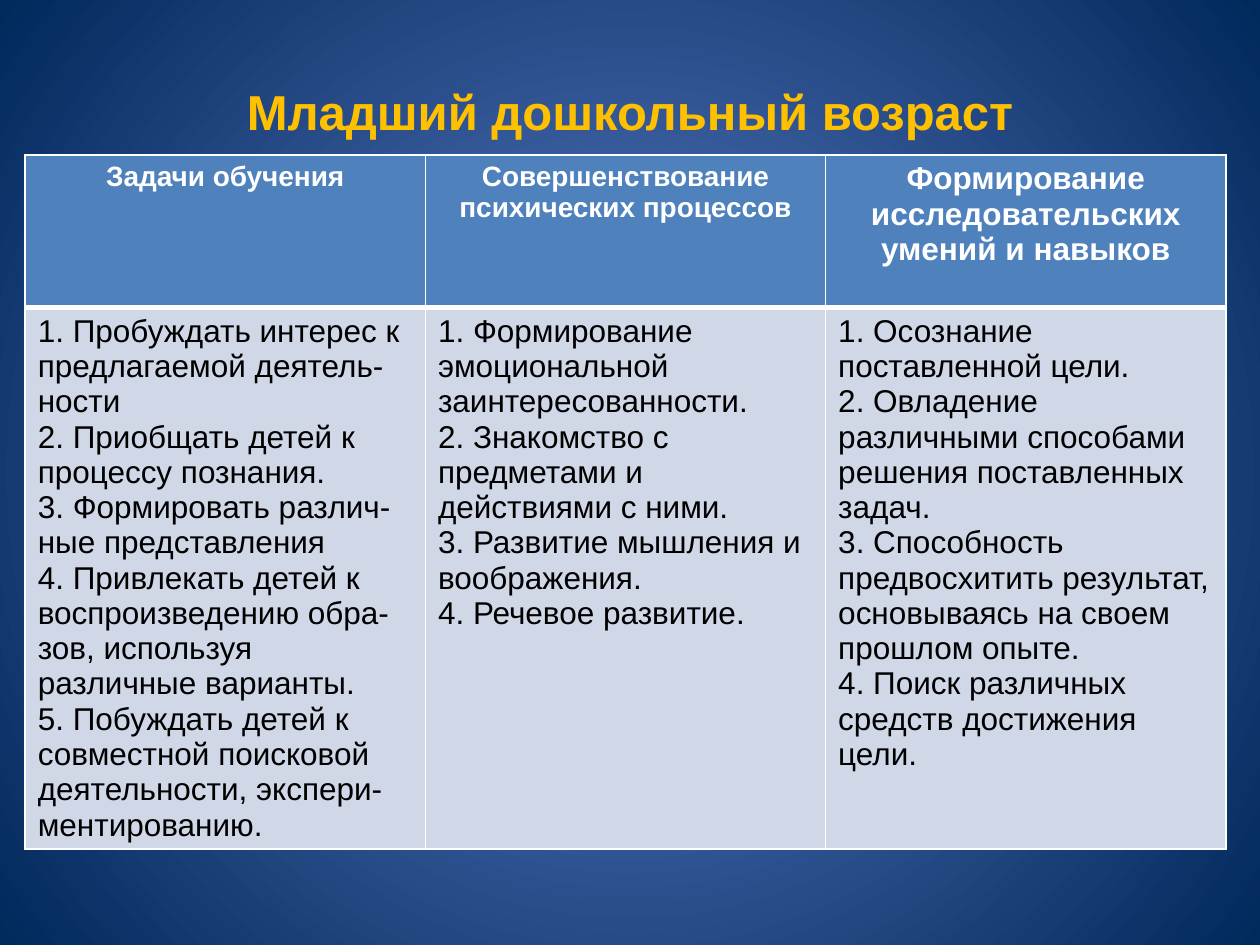
from dataclasses import dataclass

from lxml.etree import SubElement
from pptx import Presentation
from pptx.dml.color import RGBColor as RGB
from pptx.enum.text import MSO_ANCHOR as ANCHOR, PP_ALIGN as ALIGN
from pptx.oxml.ns import qn
from pptx.util import Inches, Pt


@dataclass(frozen=True)
class Theme:
    font: str = "Arial"
    glow: str = "5E7CC5"
    navy: str = "00295C"
    gold: str = "FFC000"
    header: str = "4F81BD"
    body: str = "D0D8E8"
    white: str = "FFFFFF"
    black: str = "000000"
    title_size: int = 28
    header_size: int = 16
    body_size: int = 18


T = Theme()

COLUMNS = [
    ("Задачи обучения", T.header_size, [
        "1. Пробуждать интерес к предлагаемой деятель-ности",
        "2. Приобщать детей к процессу познания.",
        "3. Формировать различ-ные представления",
        "4. Привлекать детей к воспроизведению обра-зов, используя различные варианты.",
        "5. Побуждать детей к совместной поисковой деятельности, экспери-ментированию.",
    ]),
    ("Совершенствование психических процессов", T.header_size, [
        "1. Формирование эмоциональной заинтересованности.",
        "2. Знакомство с предметами и действиями с ними.",
        "3. Развитие мышления и воображения.",
        "4. Речевое развитие.",
    ]),
    ("Формирование исследовательских умений и навыков", T.body_size, [
        "1. Осознание поставленной цели.",
        "2. Овладение различными способами решения поставленных задач.",
        "3. Способность предвосхитить результат, основываясь на своем прошлом опыте.",
        "4. Поиск различных средств достижения цели.",
    ]),
]


def write(tf, lines, size, color, bold=False, align=ALIGN.LEFT):
    """Put each line in its own paragraph of the text frame."""
    for i, line in enumerate(lines):
        p = tf.add_paragraph() if i else tf.paragraphs[0]
        p.alignment = align
        r = p.add_run()
        r.text = line
        r.font.name = T.font
        r.font.size = Pt(size)
        r.font.bold = bold
        r.font.color.rgb = RGB.from_string(color)


def style_cell(cell, fill, bottom):
    """Draw white borders, the lower one `bottom` points wide, and fill the cell."""
    tcPr = cell._tc.get_or_add_tcPr()
    for side, width in (("L", 1), ("R", 1), ("T", 1), ("B", bottom)):
        ln = SubElement(tcPr, qn(f"a:ln{side}"), w=str(Pt(width)))
        SubElement(SubElement(ln, qn("a:solidFill")), qn("a:srgbClr"), val=T.white)
    cell.fill.solid()
    cell.fill.fore_color.rgb = RGB.from_string(fill)


prs = Presentation()
prs.slide_width, prs.slide_height = Inches(10), Inches(7.5)
s = prs.slides.add_slide(prs.slide_layouts[5])

# Radial background
fill = s.background.fill
fill.gradient()
for stop, color, position in zip(fill.gradient_stops, (T.glow, T.navy), (0, 1)):
    stop.color.rgb = RGB.from_string(color)
    stop.position = position
grad = s.background._cSld.find(".//" + qn("a:gradFill"))
grad.remove(grad.find(qn("a:lin")))
radial = SubElement(grad, qn("a:path"), path="circle")
SubElement(radial, qn("a:fillToRect"), l="50000", t="50000", r="50000", b="50000")

# Title
title = s.shapes.title
title.left, title.top = Inches(0), Inches(0.58)
title.width, title.height = Inches(10), Inches(0.6)
title.text_frame.vertical_anchor = ANCHOR.MIDDLE
write(title.text_frame, ["Младший дошкольный возраст"], T.title_size, T.gold,
      bold=True, align=ALIGN.CENTER)

# Table
table = s.shapes.add_table(2, len(COLUMNS), Inches(0.2), Inches(1.23),
                           Inches(9.53), Inches(5.51)).table
table.rows[0].height, table.rows[1].height = Inches(1.21), Inches(4.3)
for i, (heading, size, goals) in enumerate(COLUMNS):
    head, body = table.cell(0, i), table.cell(1, i)
    style_cell(head, T.header, bottom=3)
    style_cell(body, T.body, bottom=1)
    write(head.text_frame, [heading], size, T.white, bold=True, align=ALIGN.CENTER)
    write(body.text_frame, goals, T.body_size, T.black)

prs.save("out.pptx")
